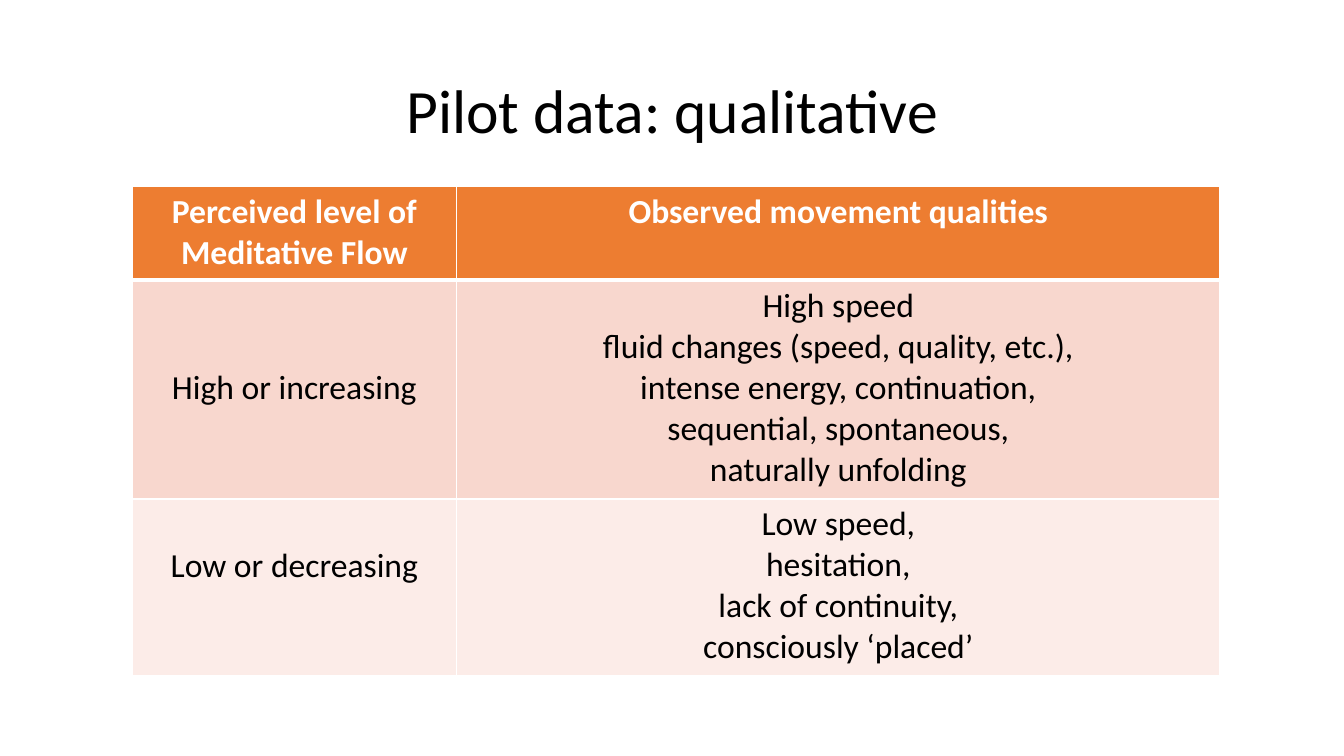
from lxml import etree
from pptx import Presentation
from pptx import util as u
from pptx.dml.color import RGBColor
from pptx.enum import text
from pptx.oxml import ns

BLACK = RGBColor(0x00, 0x00, 0x00)
WHITE = RGBColor(0xFF, 0xFF, 0xFF)
ORANGE = RGBColor(0xED, 0x7D, 0x31)
PEACH = RGBColor(0xF8, 0xD7, 0xCE)
PALE_PEACH = RGBColor(0xFC, 0xEC, 0xE8)

FONT = "Calibri"
COLUMNS = [3.22, 7.57]
ROWS = [0.93, 2.17, 1.75]
CELL_MARGIN = 0.05
LINE_HEIGHT = 0.41  # one line of 24 pt text, in inches

# Each row: fill, font colour, then (lines of text, lines to move down) per cell
CONTENT = [
    (ORANGE, WHITE, [
        (["Perceived level of Meditative Flow"], 0),
        (["Observed movement qualities"], 0),
    ]),
    (PEACH, BLACK, [
        (["High or increasing"], 2),
        (["High speed", "fluid changes (speed, quality, etc.),",
          "intense energy, continuation,", "sequential, spontaneous,",
          "naturally unfolding"], 0),
    ]),
    (PALE_PEACH, BLACK, [
        (["Low or decreasing"], 1),
        (["Low speed,", "hesitation,", "lack of continuity,",
          "consciously ‘placed’"], 0),
    ]),
]


def write_lines(frame, lines, size, color, bold=False):
    frame.word_wrap = True
    frame.text = "\n".join(lines)
    for para in frame.paragraphs:
        para.alignment = text.PP_ALIGN.CENTER
        for span in para.runs:
            span.font.name = FONT
            span.font.size = u.Pt(size)
            span.font.bold = bold
            span.font.color.rgb = color


def add_title(page, title):
    box = page.shapes.add_textbox(
        u.Inches(0.92), u.Inches(0.4), u.Inches(11.5), u.Inches(1.45))
    write_lines(box.text_frame, [title], 44, BLACK)
    box.text_frame.vertical_anchor = text.MSO_ANCHOR.MIDDLE
    box.text_frame.paragraphs[0].line_spacing = 0.9


def set_borders(cell, widths):
    """Draw white borders; widths maps a side (L, R, T, B) to points."""
    properties = cell._tc.get_or_add_tcPr()
    for side, width in widths.items():
        line = etree.SubElement(
            properties, ns.qn(f"a:ln{side}"), w=str(u.Pt(width)))
        fill = etree.SubElement(line, ns.qn("a:solidFill"))
        etree.SubElement(fill, ns.qn("a:srgbClr"), val=str(WHITE))


def add_quality_table(page):
    table = page.shapes.add_table(
        len(ROWS), len(COLUMNS), u.Inches(1.31), u.Inches(1.85),
        u.Inches(sum(COLUMNS)), u.Inches(sum(ROWS))).table
    for column, width in zip(table.columns, COLUMNS):
        column.width = u.Inches(width)
    for row, height in zip(table.rows, ROWS):
        row.height = u.Inches(height)

    for row_index, (fill, color, entries) in enumerate(CONTENT):
        header = row_index == 0
        top = 3 if row_index == 1 else 1
        bottom = 3 if header else 1
        for column_index, (lines, offset) in enumerate(entries):
            cell = table.cell(row_index, column_index)
            set_borders(cell, {"L": 1, "R": 1, "T": top, "B": bottom})
            cell.fill.solid()
            cell.fill.fore_color.rgb = fill
            cell.margin_top = u.Inches(CELL_MARGIN + offset * LINE_HEIGHT)
            write_lines(cell.text_frame, lines, 24, color, bold=header)


def main():
    deck = Presentation()
    deck.slide_width = u.Inches(13.33)
    deck.slide_height = u.Inches(7.5)
    page = deck.slides.add_slide(deck.slide_layouts[6])

    # Heading above the two-column table
    add_title(page, "Pilot data: qualitative")
    add_quality_table(page)
    deck.save("out.pptx")


if __name__ == "__main__":
    main()
